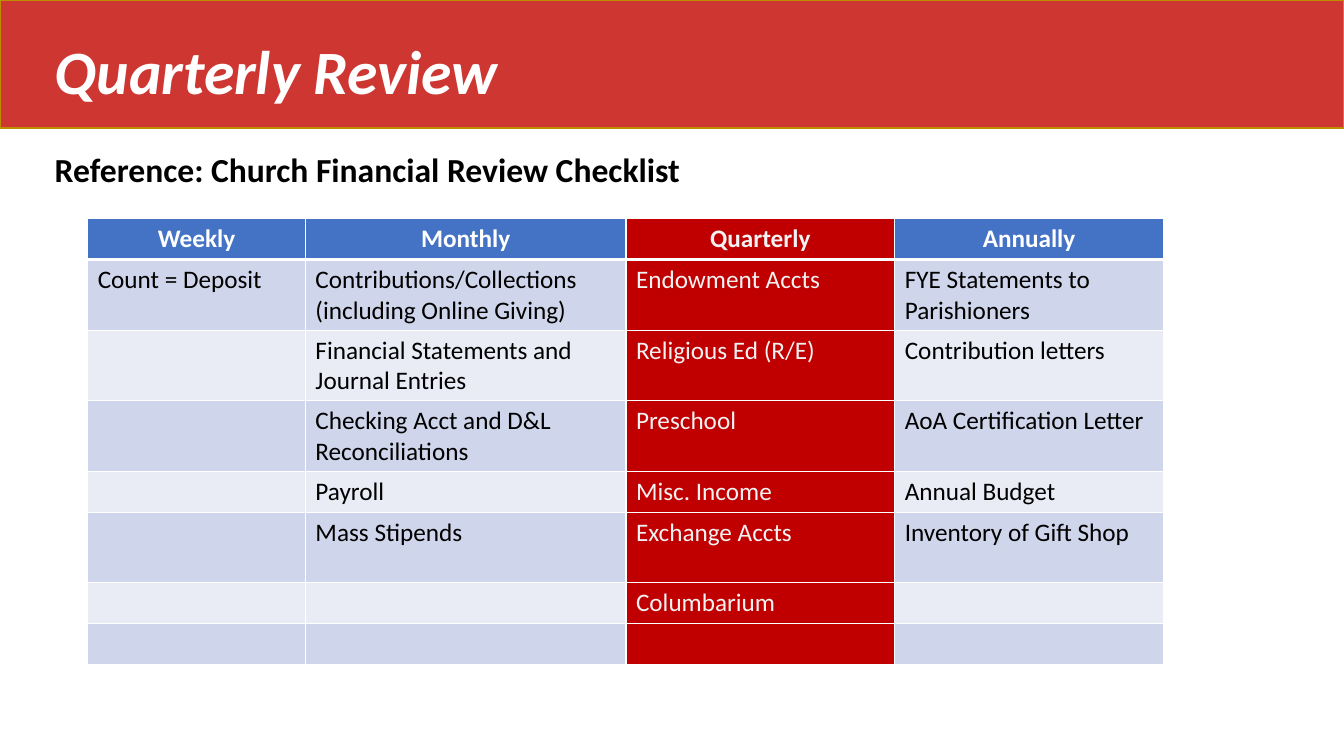
from lxml.etree import SubElement
from pptx import Presentation
from pptx.dml.color import RGBColor
from pptx.enum.shapes import MSO_SHAPE
from pptx.enum.text import MSO_ANCHOR, PP_ALIGN
from pptx.oxml.ns import qn
from pptx.util import Inches, Pt

COLORS = {
    "banner": "CE3632", "banner_line": "BD8E00", "white": "FFFFFF", "black": "000000",
    "header": "4472C4", "band_dark": "CFD5EA", "band_light": "E9EBF5",
    "highlight": "C00000", "highlight_text": "F2F2F2",
}
GRID_COLUMNS, GRID_ROWS = 120, 75
TEXT_LEFT, TEXT_WIDTH = 4, 112

HIGHLIGHT_COLUMN = 2
COLUMN_WIDTHS = [19.44, 28.62, 24, 24]
SINGLE, DOUBLE = 4.05, 7
ROW_HEIGHTS = [SINGLE, DOUBLE, DOUBLE, DOUBLE, SINGLE, DOUBLE, SINGLE, SINGLE]
REVIEW_ITEMS = [
    ["Weekly", "Monthly", "Quarterly", "Annually"],
    ["Count = Deposit", "Contributions/Collections (including Online Giving)",
     "Endowment Accts", "FYE Statements to Parishioners"],
    ["", "Financial Statements and Journal Entries", "Religious Ed (R/E)", "Contribution letters"],
    ["", "Checking Acct and D&L Reconciliations", "Preschool", "AoA Certification Letter"],
    ["", "Payroll", "Misc. Income", "Annual Budget"],
    ["", "Mass Stipends", "Exchange Accts", "Inventory of Gift Shop"],
    ["", "", "Columbarium", ""],
    ["", "", "", ""],
]


def rgb(name):
    return RGBColor.from_string(COLORS[name])


class SlideBuilder:
    """Places styled elements on one slide, in units of a 120 by 75 grid."""

    def __init__(self, presentation):
        self.font_name = "Calibri"
        self.column = presentation.slide_width / GRID_COLUMNS
        self.row = presentation.slide_height / GRID_ROWS
        self.slide = presentation.slides.add_slide(presentation.slide_layouts[5])

    def box(self, left, top, width, height):
        return (round(left * self.column), round(top * self.row),
                round(width * self.column), round(height * self.row))

    def add_text(self, text_frame, text, color, size, alignment=PP_ALIGN.LEFT, **font_values):
        paragraph = text_frame.paragraphs[0]
        paragraph.alignment = alignment
        paragraph.line_spacing = 1.0
        paragraph.font.size = Pt(size)
        if not text:
            return
        run = paragraph.add_run()
        run.text = text
        run.font.color.rgb = rgb(color)
        for name, value in {"name": self.font_name, "size": Pt(size), **font_values}.items():
            setattr(run.font, name, value)

    def title(self, text, *place):
        title = self.slide.shapes.title
        title.left, title.top, title.width, title.height = self.box(*place)
        title.text_frame.vertical_anchor = MSO_ANCHOR.TOP
        self.add_text(title.text_frame, text, "white", 44, bold=True, italic=True)

    def banner(self, *place):
        """Draws the coloured band behind the title."""
        banner = self.slide.shapes.add_shape(MSO_SHAPE.RECTANGLE, *self.box(*place))
        banner.shadow.inherit = False
        banner.fill.solid()
        banner.fill.fore_color.rgb = rgb("banner")
        banner.line.color.rgb = rgb("banner_line")
        banner.line.width = Pt(1)
        self.slide.shapes.title._element.addprevious(banner._element)

    def heading(self, text, *place):
        text_frame = self.slide.shapes.add_textbox(*self.box(*place)).text_frame
        text_frame.word_wrap = True
        self.add_text(text_frame, text, "black", 24, bold=True)

    def border(self, cell, widths):
        properties = cell._tc.get_or_add_tcPr()
        for side, width in widths.items():
            line = SubElement(properties, qn(f"a:ln{side}"), w=str(Pt(width)))
            fill = SubElement(line, qn("a:solidFill"))
            SubElement(fill, qn("a:srgbClr"), val=COLORS["white"])

    def table(self, left, top, column_widths, row_heights, items):
        place = self.box(left, top, sum(column_widths), sum(row_heights))
        table = self.slide.shapes.add_table(len(items), len(items[0]), *place).table
        for column, width in zip(table.columns, column_widths):
            column.width = round(width * self.column)
        for row, height in zip(table.rows, row_heights):
            row.height = round(height * self.row)
        for row_index, row_items in enumerate(items):
            for column_index, text in enumerate(row_items):
                self.cell(table.cell(row_index, column_index), text,
                          row_index, column_index == HIGHLIGHT_COLUMN)

    def cell(self, cell, text, row_index, highlighted):
        is_header = row_index == 0
        fill, color = ("band_dark" if row_index % 2 else "band_light"), "black"
        if is_header:
            fill, color = "header", "white"
        if highlighted:
            fill, color = "highlight", "highlight_text"
        self.border(cell, {"L": 1, "R": 1, "T": 3 if row_index == 1 else 1,
                           "B": 3 if is_header else 1})
        cell.fill.solid()
        cell.fill.fore_color.rgb = rgb(fill)
        alignment = PP_ALIGN.CENTER if is_header else PP_ALIGN.LEFT
        self.add_text(cell.text_frame, text, color, 18, alignment, bold=is_header)


def main():
    presentation = Presentation()
    presentation.slide_width, presentation.slide_height = Inches(13.33), Inches(7.5)
    builder = SlideBuilder(presentation)
    builder.title("Quarterly Review", TEXT_LEFT, 2.8, TEXT_WIDTH, 8.5)
    builder.banner(0, 0, GRID_COLUMNS, 12.7)
    builder.heading("Reference: Church Financial Review Checklist",
                    TEXT_LEFT, 14.3, TEXT_WIDTH, 5)
    builder.table(7.83, 21.7, COLUMN_WIDTHS, ROW_HEIGHTS, REVIEW_ITEMS)
    presentation.save("out.pptx")


if __name__ == "__main__":
    main()
